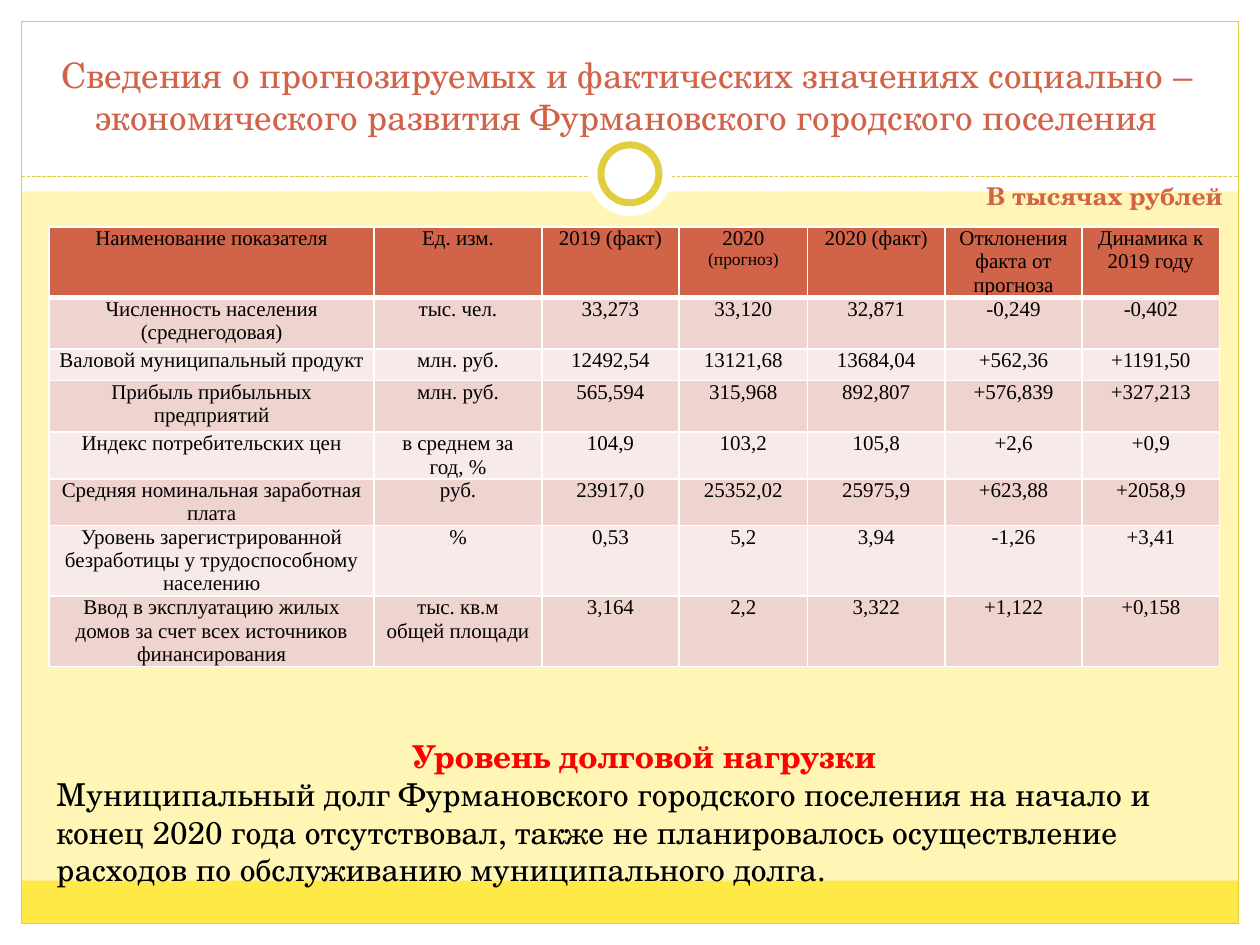
from dataclasses import dataclass

from lxml import etree
from pptx import Presentation
from pptx.dml.color import RGBColor
from pptx.enum.dml import MSO_LINE
from pptx.enum.shapes import MSO_CONNECTOR, MSO_SHAPE
from pptx.enum.text import MSO_ANCHOR, MSO_AUTO_SIZE, PP_ALIGN
from pptx.oxml.ns import qn
from pptx.util import Inches, Pt

RECT, OVAL = MSO_SHAPE.RECTANGLE, MSO_SHAPE.OVAL
STRAIGHT = MSO_CONNECTOR.STRAIGHT
LEFT, CENTER = PP_ALIGN.LEFT, PP_ALIGN.CENTER
BOTTOM = MSO_ANCHOR.BOTTOM
NO_AUTOFIT = MSO_AUTO_SIZE.NONE
DASH = MSO_LINE.SQUARE_DOT
TITLE_ONLY = 5


@dataclass(frozen=True)
class Theme:
    background: str = "FFF6B5"
    white: str = "FFFFFF"
    footer: str = "FFE947"
    gold: str = "E1CE3F"
    accent: str = "D16349"
    row_dark: str = "EED3CF"
    row_light: str = "F7EAE9"
    text: str = "000000"
    alert: str = "FF0000"
    font: str = "TeX Gyre Schola"
    table_font: str = "Times New Roman"
    title_size: int = 20
    body_size: int = 18
    unit_size: int = 14
    table_size: int = 12
    small_size: int = 10


THEME = Theme()

TITLE = ("Сведения о прогнозируемых и фактических значениях социально – "
         "экономического развития Фурмановского городского поселения")
UNIT = "В тысячах рублей"
DEBT_HEADING = "Уровень долговой нагрузки"
DEBT_TEXT = ("Муниципальный долг Фурмановского городского поселения на начало и "
             "конец 2020 года отсутствовал, также не планировалось осуществление "
             "расходов по обслуживанию муниципального долга.")
FORECAST_HEADER = ("2020 ", "(прогноз)")

INDICATORS = [
    ("Наименование показателя", "Ед. изм.", "2019 (факт)", "".join(FORECAST_HEADER),
     "2020 (факт)", "Отклонения факта от прогноза", "Динамика к 2019 году"),
    ("Численность населения (среднегодовая)", "тыс. чел.",
     "33,273", "33,120", "32,871", "-0,249", "-0,402"),
    ("Валовой муниципальный продукт", "млн. руб.",
     "12492,54", "13121,68", "13684,04", "+562,36", "+1191,50"),
    ("Прибыль прибыльных предприятий", "млн. руб.",
     "565,594", "315,968", "892,807", "+576,839", "+327,213"),
    ("Индекс потребительских цен", "в среднем за год, %",
     "104,9", "103,2", "105,8", "+2,6", "+0,9"),
    ("Средняя номинальная заработная плата", "руб.",
     "23917,0", "25352,02", "25975,9", "+623,88", "+2058,9"),
    ("Уровень зарегистрированной безработицы у трудоспособному населению", "%",
     "0,53", "5,2", "3,94", "-1,26", "+3,41"),
    ("Ввод в эксплуатацию жилых домов за счет всех источников финансирования",
     "тыс. кв.м\nобщей площади", "3,164", "2,2", "3,322", "+1,122", "+0,158"),
]
COLUMN_WIDTHS = (2.58, 1.33, 1.09, 1.02, 1.09, 1.09, 1.09)
ROW_HEIGHTS = (0.56, 0.41, 0.25, 0.41, 0.37, 0.37, 0.56, 0.56)


def rgb(value):
    return RGBColor.from_string(value)


def format_paragraph(paragraph, size, color, font=THEME.font, bold=False, align=LEFT):
    paragraph.alignment = align
    for run in paragraph.runs:
        run.font.size = Pt(size)
        run.font.name = font
        run.font.bold = bold
        run.font.color.rgb = rgb(color)


def add_panel(slide, preset, box, fill=None, line=None, weight=0.75):
    panel = slide.shapes.add_shape(preset, *map(Inches, box))
    panel.shadow.inherit = False
    if fill:
        panel.fill.solid()
        panel.fill.fore_color.rgb = rgb(fill)
    else:
        panel.fill.background()
    if line:
        panel.line.color.rgb = rgb(line)
        panel.line.width = Pt(weight)
    else:
        panel.line.fill.background()


def add_frame(slide, box):
    """White margins, footer band, outline, dashed divider and ring."""
    left, top, width, height = box
    margin, header, footer, divider_y = 0.17, 1.52, 0.34, 1.4
    right, bottom = left + width, top + height

    # Margins and footer band
    for band in ((left, bottom - margin, width, margin),
                 (left, top, width, header),
                 (left, top, margin, height),
                 (right - margin, top, margin, height)):
        add_panel(slide, RECT, band, THEME.white)
    inner_width = width - 2 * margin
    add_panel(slide, RECT, (left + margin, bottom - margin - footer, inner_width, footer),
              THEME.footer)
    add_panel(slide, RECT, (left + margin, top + margin, inner_width, height - 2 * margin),
              line=THEME.gold)

    # Divider under the title
    divider = slide.shapes.add_connector(
        STRAIGHT, Inches(left + margin), Inches(top + divider_y),
        Inches(right - margin), Inches(top + divider_y))
    divider.line.color.rgb = rgb(THEME.gold)
    divider.line.width = Pt(0.75)
    divider.line.dash_style = DASH
    etree.SubElement(divider.line._get_or_add_ln().getparent(), qn("a:effectLst"))

    # Ring centred on the divider
    center_x, center_y = left + width / 2, top + 1.38
    for diameter, outline in ((0.67, None), (0.46, THEME.gold)):
        add_panel(slide, OVAL, (center_x - diameter / 2, center_y - diameter / 2,
                                diameter, diameter), THEME.white, outline, 4)


def place_title(slide, box):
    title = slide.shapes.title
    title.left, title.top, title.width, title.height = map(Inches, box)
    frame = title.text_frame
    frame.text = TITLE
    frame.word_wrap = True
    frame.auto_size = NO_AUTOFIT
    frame.vertical_anchor = BOTTOM
    format_paragraph(frame.paragraphs[0], THEME.title_size, THEME.accent, align=CENTER)
    # Bring the title in front of the white header
    slide.shapes._spTree.append(title._element)


def set_borders(cell, top, bottom):
    properties = cell._tc.get_or_add_tcPr()
    for side, weight in (("L", 1), ("R", 1), ("T", top), ("B", bottom)):
        border = etree.SubElement(properties, qn(f"a:ln{side}"), w=str(Pt(weight)))
        fill = etree.SubElement(border, qn("a:solidFill"))
        etree.SubElement(fill, qn("a:srgbClr"), val=THEME.white)


def add_indicator_table(slide, box):
    table = slide.shapes.add_table(len(INDICATORS), len(COLUMN_WIDTHS),
                                   *map(Inches, box)).table
    for column, width in zip(table.columns, COLUMN_WIDTHS):
        column.width = Inches(width)
    for row, height in zip(table.rows, ROW_HEIGHTS):
        row.height = Inches(height)

    for r, indicator in enumerate(INDICATORS):
        band = THEME.accent if r == 0 else (THEME.row_light, THEME.row_dark)[r % 2]
        for c, value in enumerate(indicator):
            cell = table.cell(r, c)
            set_borders(cell, 3 if r == 1 else 1, 3 if r == 0 else 1)
            cell.fill.solid()
            cell.fill.fore_color.rgb = rgb(band)
            cell.margin_left = cell.margin_right = Inches(0.07)
            cell.margin_top = cell.margin_bottom = 0
            cell.text_frame.text = value
            for paragraph in cell.text_frame.paragraphs:
                format_paragraph(paragraph, THEME.table_size, THEME.text,
                                 THEME.table_font, align=CENTER)

    # Forecast header has a smaller second part
    forecast = table.cell(0, 3).text_frame.paragraphs[0]
    year, note = FORECAST_HEADER
    forecast.runs[0].text = year
    forecast.add_run().text = note
    format_paragraph(forecast, THEME.table_size, THEME.text, THEME.table_font, align=CENTER)
    forecast.runs[1].font.size = Pt(THEME.small_size)


def add_text(slide, box, text):
    frame = slide.shapes.add_textbox(*map(Inches, box)).text_frame
    frame.word_wrap = True
    frame.text = text
    return frame.paragraphs


def add_debt_note(slide, box):
    heading, body = add_text(slide, box, f"{DEBT_HEADING}\n{DEBT_TEXT}")
    format_paragraph(heading, THEME.body_size, THEME.alert, bold=True, align=CENTER)
    format_paragraph(body, THEME.body_size, THEME.text)


def add_unit_label(slide, box):
    label = add_text(slide, box, UNIT)[0]
    format_paragraph(label, THEME.unit_size, THEME.accent, bold=True)


def main():
    deck = Presentation()
    deck.slide_width, deck.slide_height = Inches(10), Inches(7.5)
    slide = deck.slides.add_slide(deck.slide_layouts[TITLE_ONLY])
    slide.background.fill.solid()
    slide.background.fill.fore_color.rgb = rgb(THEME.background)

    add_frame(slide, (0, 0, 10, 7.5))
    place_title(slide, (0.31, 0.31, 9.33, 0.83))
    add_indicator_table(slide, (0.39, 1.8, sum(COLUMN_WIDTHS), sum(ROW_HEIGHTS)))
    add_debt_note(slide, (0.35, 5.8, 9.53, 1.31))
    add_unit_label(slide, (7.73, 1.39, 2.27, 0.47))
    deck.save("out.pptx")


if __name__ == "__main__":
    main()
